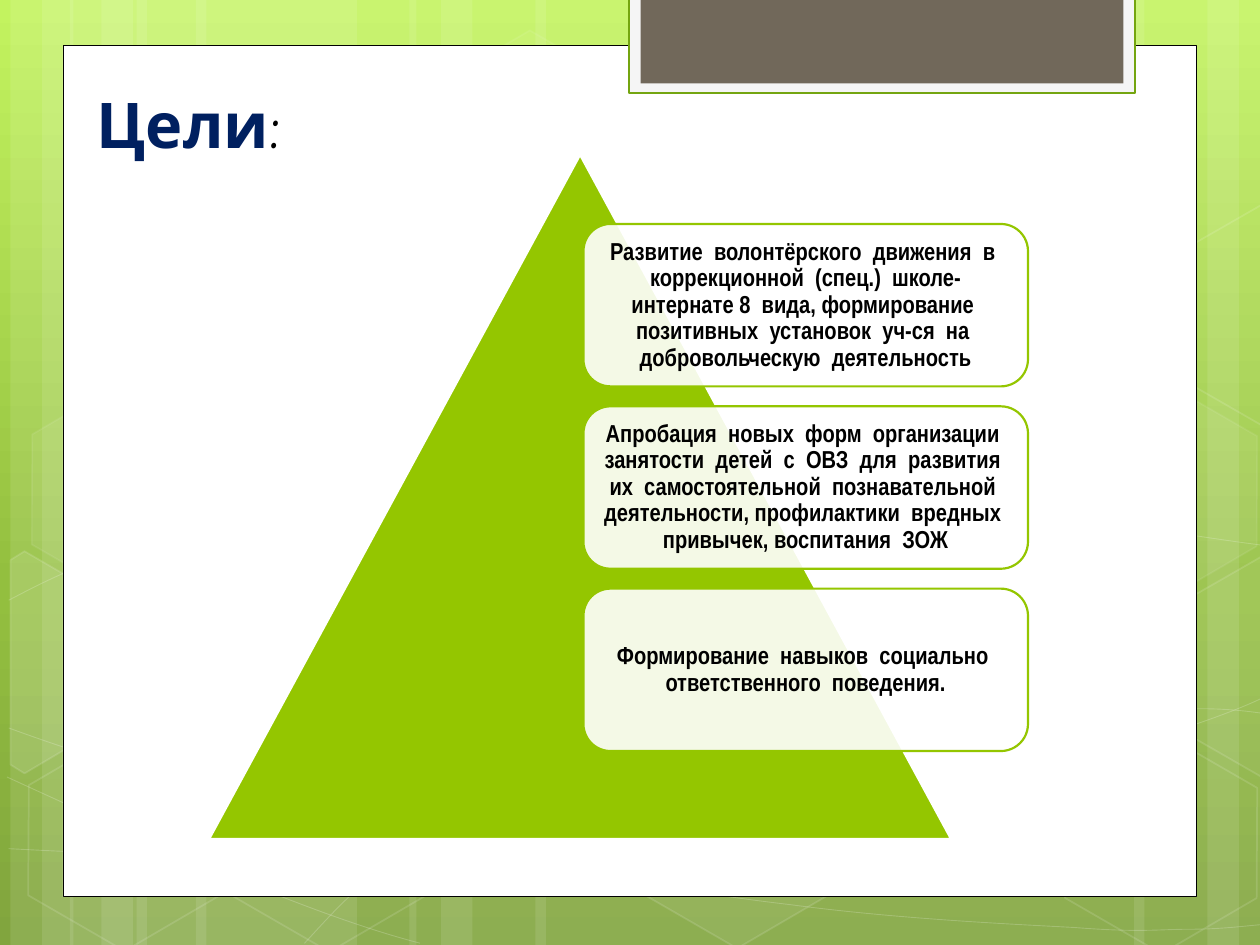
from copy import deepcopy
from typing import NamedTuple, Optional

from lxml import etree
from pptx import Presentation
from pptx.dml.color import RGBColor
from pptx.enum.shapes import MSO_SHAPE
from pptx.enum.text import MSO_ANCHOR, PP_ALIGN
from pptx.oxml.ns import qn
from pptx.util import Pt

RECT, HEXAGON = MSO_SHAPE.RECTANGLE, MSO_SHAPE.HEXAGON
TRIANGLE, ROUNDED = MSO_SHAPE.ISOSCELES_TRIANGLE, MSO_SHAPE.ROUNDED_RECTANGLE
MIDDLE, BOTTOM = MSO_ANCHOR.MIDDLE, MSO_ANCHOR.BOTTOM
CENTER = PP_ALIGN.CENTER

WHITE = RGBColor(0xFF, 0xFF, 0xFF)
BLACK = RGBColor(0x00, 0x00, 0x00)
NAVY = RGBColor(0x00, 0x20, 0x60)
LIME = RGBColor(0x94, 0xC6, 0x00)
GREEN = RGBColor(0x74, 0xA5, 0x10)
PALE = RGBColor(0xF5, 0xF5, 0xF5)
TAUPE = RGBColor(0x71, 0x68, 0x5A)
BACKDROP = [(0, RGBColor(0xC3, 0xF3, 0x5F)),
            (0.62, RGBColor(0x93, 0xBF, 0x3F)),
            (1, RGBColor(0x81, 0xA5, 0x3E))]


class Style(NamedTuple):
    fill: Optional[RGBColor] = None
    line: Optional[RGBColor] = None
    width: float = 1
    fill_alpha: int = 100
    line_alpha: int = 100


class Box(NamedTuple):
    x: float
    y: float
    w: float
    h: float


class Hexagon(NamedTuple):
    x: float
    y: float
    fill_alpha: int
    line_alpha: int


SLIDE_W, SLIDE_H = 720, 540
STRIPES = [(78, 126), (6, 36), (24, 60), (112, 126), (40, 36), (58, 60),
           (528, 126), (690, 36), (648, 60), (306, 222), (234, 36), (252, 60)]

# Each curve is a start point, then three points per Bézier segment
CURVES = [
    [(5, 485), (44, 487), (83, 489), (137, 488), (191, 487), (258, 486), (330, 479),
     (402, 472), (504, 458), (570, 444), (636, 431), (703, 409), (725, 397)],
    [(5, 343), (26, 332), (47, 321), (87, 310), (128, 300), (187, 284), (250, 279),
     (314, 274), (392, 273), (471, 279), (550, 284), (682, 307), (725, 312)],
    [(4, 444), (91, 484), (178, 523), (240, 539)],
    [(5, 416), (27, 424), (50, 432), (92, 444), (134, 454), (197, 472), (257, 485),
     (317, 497), (392, 510), (452, 517), (512, 525), (576, 528), (614, 530),
     (652, 533), (662, 531), (680, 531), (699, 531), (712, 529), (725, 528)],
    [(174, 539), (187, 525), (200, 510), (217, 498), (235, 485), (259, 470), (279, 460),
     (300, 450), (312, 446), (338, 438), (364, 431), (413, 421), (438, 416),
     (464, 411), (467, 411), (490, 410), (512, 408), (547, 405), (572, 405),
     (597, 404), (638, 405), (638, 405), (654, 405), (670, 405), (686, 405),
     (699, 405), (711, 406), (724, 408)],
]
HEXAGONS = [
    Hexagon(240, 26, 4, 8), Hexagon(358, 424, 6, 12), Hexagon(8, 425.5, 0, 12),
    Hexagon(10, 225, 7, 8), Hexagon(125, 426, 0, 12), Hexagon(542, 326, 10, 12),
    Hexagon(600.5, 427, 0, 12), Hexagon(600.5, 226, 7, 8),
]
LEFT_CUT = [(6, 320), (14, 315), (69, 347), (68, 410), (14, 442), (6, 437)]
RIGHT_CUT = [(667, 349), (721, 318), (726, 321), (726, 441), (721, 444), (667, 413)]
CUT_HEXAGONS = [(LEFT_CUT, 10), (RIGHT_CUT, 4), ([(x, y - 201) for x, y in RIGHT_CUT], 0)]

PANELS = [
    (RECT, Box(36, 26, 648, 486.5), Style(WHITE, BLACK, 0.5)),
    (RECT, Box(359.3, -1.4, 289.4, 54.7), Style(PALE, GREEN, 1.25)),
    (RECT, Box(366, -1.4, 276, 49), Style(TAUPE)),
]
TITLE_BOX = Box(48.2, 77, 553, 18.7)
TITLE_RUNS = [
    ("Цели", {"size": Pt(36), "name": "Comic Neue", "bold": True}, NAVY),
    (":", {"size": Pt(36), "name": "Comic Neue", "bold": False}, BLACK),
]
PYRAMID = Box(119.5, 88.5, 424, 391)
FIRST_CARD, CARD_PITCH = Box(333.4, 128, 254, 92.8), 104.2
CARD_FONT = {"size": Pt(14), "name": "Arial Narrow", "bold": True}
GOALS = [
    "Развитие  волонтёрского  движения  в  коррекционной  (спец.)  школе-интернате "
    "8  вида, формирование  позитивных  установок  уч-ся  на  добровольческую  деятельность",
    "Апробация  новых  форм  организации  занятости  детей  с  ОВЗ  для  развития  их  "
    "самостоятельной  познавательной  деятельности, профилактики  вредных  привычек, "
    "воспитания  ЗОЖ",
    "Формирование  навыков  социально  ответственного  поведения.",
]


def set_alpha(parent, percent: int) -> None:
    if percent < 100:
        clr = parent.find(qn("a:solidFill")).find(qn("a:srgbClr"))
        etree.SubElement(clr, qn("a:alpha")).set("val", str(percent * 1000))


def apply_style(sp, style: Style) -> None:
    sp.shadow.inherit = False
    if style.fill is None or style.fill_alpha == 0:
        sp.fill.background()
    else:
        sp.fill.solid()
        sp.fill.fore_color.rgb = style.fill
        set_alpha(sp.element.spPr, style.fill_alpha)
    if style.line is None:
        sp.line.fill.background()
    else:
        sp.line.color.rgb = style.line
        sp.line.width = Pt(style.width)
        set_alpha(sp.element.spPr.find(qn("a:ln")), style.line_alpha)


def add_shape(s, kind, box: Box, style: Style):
    sp = s.shapes.add_shape(kind, *map(Pt, box))
    apply_style(sp, style)
    return sp


def add_outline(s, points: list, style: Style, close: bool):
    pts = [(Pt(x), Pt(y)) for x, y in points]
    builder = s.shapes.build_freeform(*pts[0])
    builder.add_line_segments(pts[1:], close=close)
    sp = builder.convert_to_shape()
    apply_style(sp, style)
    return sp


def add_curve(s, points: list, style: Style) -> None:
    """Draw the control polygon, then merge each three lines into a Bézier."""
    sp = add_outline(s, points, style, close=False)
    lines = list(sp.element.spPr.iter(qn("a:lnTo")))
    for i in range(0, len(lines), 3):
        bezier = etree.Element(qn("a:cubicBezTo"))
        lines[i].addprevious(bezier)
        for line in lines[i:i + 3]:
            bezier.append(line[0])
            line.getparent().remove(line)


def add_run(p, text: str, font: dict, color: RGBColor) -> None:
    r = p.add_run()
    r.text = text
    for name, value in font.items():
        setattr(r.font, name, value)
    r.font.color.rgb = color


def set_backdrop(s) -> None:
    fill = s.background.fill
    fill.gradient()
    fill.gradient_angle = 270
    first = next(s.element.iter(qn("a:gs")))
    first.addnext(deepcopy(first))
    for stop, (position, color) in zip(fill.gradient_stops, BACKDROP):
        stop.position = position
        stop.color.rgb = color


def add_card(s, box: Box, text: str) -> None:
    sp = add_shape(s, ROUNDED, box, Style(WHITE, LIME, 1.25, fill_alpha=90))
    tf = sp.text_frame
    tf.word_wrap, tf.vertical_anchor = True, MIDDLE
    for side in ("left", "top", "right", "bottom"):
        setattr(tf, f"margin_{side}", Pt(4.5))
    p = tf.paragraphs[0]
    p.alignment, p.line_spacing = CENTER, 0.9
    add_run(p, text, CARD_FONT, BLACK)


def main() -> None:
    prs = Presentation()
    prs.slide_width, prs.slide_height = Pt(SLIDE_W), Pt(SLIDE_H)
    s = prs.slides.add_slide(prs.slide_layouts[6])

    # Backdrop: gradient, stripes, curves and hexagons
    set_backdrop(s)
    for x, w in STRIPES:
        add_shape(s, RECT, Box(x, 0, w, SLIDE_H), Style(WHITE, fill_alpha=10))
    for points in CURVES:
        add_curve(s, points, Style(line=WHITE, width=0.5, line_alpha=20))
    for x, y, fill_alpha, line_alpha in HEXAGONS:
        sp = add_shape(s, HEXAGON, Box(x, y, 126, 109.4),
                       Style(WHITE, WHITE, 1, fill_alpha, line_alpha))
        sp.adjustments[0] = 0.285
        sp.rotation = 30
    for points, fill_alpha in CUT_HEXAGONS:
        add_outline(s, points, Style(WHITE, WHITE, 1, fill_alpha, 12), close=True)

    # White page and top tab
    for kind, box, style in PANELS:
        add_shape(s, kind, box, style)

    # Title
    tf = s.shapes.add_textbox(*map(Pt, TITLE_BOX)).text_frame
    tf.word_wrap, tf.vertical_anchor = True, BOTTOM
    for text, font, color in TITLE_RUNS:
        add_run(tf.paragraphs[0], text, font, color)

    # Pyramid with goal cards
    add_shape(s, TRIANGLE, PYRAMID, Style(LIME, WHITE, 1.25))
    for i, goal in enumerate(GOALS):
        add_card(s, FIRST_CARD._replace(y=FIRST_CARD.y + i * CARD_PITCH), goal)

    prs.save("out.pptx")


if __name__ == "__main__":
    main()
